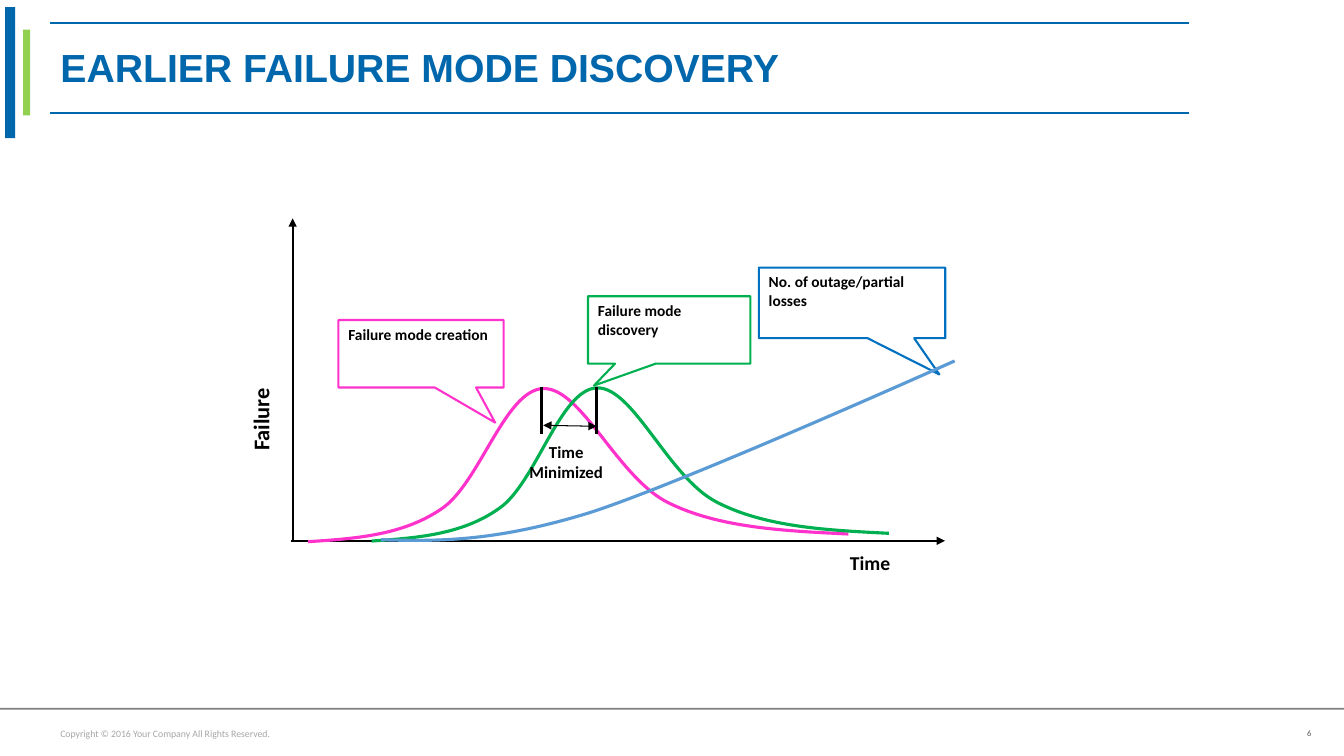
from lxml import etree
from pptx import Presentation
from pptx.dml.color import RGBColor
from pptx.enum import shapes as es, text as et
from pptx.oxml.ns import qn
from pptx.util import Pt

BLUE = RGBColor(0x00, 0x67, 0xAC)
LIME = RGBColor(0x92, 0xD0, 0x50)
GRAY = RGBColor(0x80, 0x80, 0x80)
PALE = RGBColor(0xA6, 0xA6, 0xA6)
DARK = RGBColor(0x59, 0x59, 0x59)
BLACK = RGBColor(0, 0, 0)
WHITE = RGBColor(0xFF, 0xFF, 0xFF)
PINK = RGBColor(0xFF, 0x33, 0xCC)
GREEN = RGBColor(0x00, 0xB0, 0x50)
AZURE = RGBColor(0x00, 0x70, 0xC0)
SKY = RGBColor(0x5B, 0x9B, 0xD5)

LEFT, MID, RIGHT = et.PP_ALIGN.LEFT, et.PP_ALIGN.CENTER, et.PP_ALIGN.RIGHT
RECT = es.MSO_SHAPE.RECTANGLE
CALL = es.MSO_SHAPE.RECTANGULAR_CALLOUT

# Curves as Bezier points, in fractions of their frame
BELL = [(0, 1), (.086, .98), (.174, .96), (.246, .79),
        (.317, .63), (.364, .02), (.435, .01),
        (.506, 0), (.573, .59), (.668, .75),
        (.761, .91), (.881, .93), (1, .95)]
RISE = [(0, .99), (.1, 1), (.2, 1), (.364, .84), (.53, .67), (1, 0), (1, 0)]


def write(shape, lines, size, color=BLACK, bold=True, align=LEFT, after=0,
          font="Calibri", anchor=et.MSO_ANCHOR.TOP):
    frame = shape.text_frame
    frame.word_wrap = True
    frame.vertical_anchor = anchor
    frame.text = "\n".join(lines)
    for para in frame.paragraphs:
        para.alignment = align
        para.space_after = Pt(after)
        para.font.name = font
        para.font.size = Pt(size)
        para.font.bold = bold
        para.font.color.rgb = color
    return frame


def label(part, x, y, w, h, lines, size, **look):
    area = part.shapes.add_textbox(Pt(x), Pt(y), Pt(w), Pt(h))
    write(area, lines, size, **look)
    return area


def block(part, kind, x, y, w, h, fill):
    shape = part.shapes.add_shape(kind, Pt(x), Pt(y), Pt(w), Pt(h))
    shape.shadow.inherit = False
    shape.fill.solid()
    shape.fill.fore_color.rgb = fill
    shape.line.fill.background()
    return shape


def rule(part, x1, y1, x2, y2, color, width, ends=()):
    line = part.shapes.add_connector(
        es.MSO_CONNECTOR.STRAIGHT, Pt(x1), Pt(y1), Pt(x2), Pt(y2))
    line.line.color.rgb = color
    line.line.width = Pt(width)
    for end in ends:
        etree.SubElement(line.line._get_or_add_ln(), qn("a:" + end),
                         type="triangle")
    etree.SubElement(line._element.spPr, qn("a:effectLst"))


def curve(part, x, y, w, h, knots, color):
    dots = [(Pt(x + u * w), Pt(y + v * h)) for u, v in knots]
    pen = part.shapes.build_freeform(*dots[0])
    pen.add_line_segments(dots[1:], close=False)
    shape = pen.convert_to_shape()
    # Join each three segments into one cubic Bezier
    steps = list(shape._element.iter(qn("a:lnTo")))
    for i in range(0, len(steps), 3):
        bend = etree.Element(qn("a:cubicBezTo"))
        steps[i].addprevious(bend)
        for step in steps[i:i + 3]:
            bend.append(step[0])
            step.getparent().remove(step)
    shape.shadow.inherit = False
    shape.fill.background()
    shape.line.color.rgb = color
    shape.line.width = Pt(2.25)


def header(slide, x, y, w, h):
    # Side bars and rules
    block(slide, RECT, x - 19.4, y + 4.6, 5, 61.2, LIME)
    block(slide, RECT, x - 32.4, y - 11.5, 7.2, 93.6, BLUE)
    for edge in (y + h, y):
        rule(slide, x, edge, x + w, edge, BLUE, 1.5)
    # Title
    title = slide.shapes.title
    title.left, title.top = Pt(x), Pt(y + 5.6)
    title.width, title.height = Pt(w + 6), Pt(55.4)
    frame = write(title, ["EARLIER FAILURE MODE DISCOVERY"], 28, BLUE,
                  font="Arial", anchor=et.MSO_ANCHOR.MIDDLE)
    frame.paragraphs[0].line_spacing = .9


def footer(slide, x, y, w):
    block(slide, RECT, x, y, w, 1.4, GRAY)
    label(slide, x + 36, y + 10.4, 901, 16.6,
          ["Copyright © 2016 Your Company All Rights Reserved."], 7,
          color=PALE, bold=False, anchor=et.MSO_ANCHOR.MIDDLE)
    page = label(slide, x + 897, y + 10.4, 39.6, 18, ["6"], 6, color=DARK,
                 bold=False, align=RIGHT).text_frame
    page.margin_left = page.margin_top = Pt(4.3)
    page.margin_right = page.margin_bottom = 0


def graph(slide, x, y, w, h):
    # Axes
    rule(slide, x - 1, y + h, x + w, y + h, BLACK, 1.5, ["tailEnd"])
    rule(slide, x, y + h, x, y, BLACK, 1.5, ["tailEnd"])
    # Bell curves
    curve(slide, x + 11, y + 120.5, 386, 110.5, BELL, PINK)
    curve(slide, x + 56.5, y + 120, 369.5, 110.5, BELL, GREEN)
    # Callouts
    for dx, dy, cw, ch, tip, color, words in (
            (211, 55.6, 116, 48.2, (-.463, .825), GREEN,
             "Failure mode discovery"),
            (32.7, 72.6, 118, 48.2, (.449, 1.021), PINK,
             "Failure mode creation"),
            (333, 35.2, 133.2, 50.4, (.468, 1.013), AZURE,
             "No. of outage/partial losses")):
        call = block(slide, CALL, x + dx, y + dy, cw, ch, WHITE)
        call.adjustments[0], call.adjustments[1] = tip
        call.line.color.rgb = color
        call.line.width = Pt(1.5)
        write(call, [words], 11, after=10)
    # Gap between the peaks
    gap = slide.shapes.add_group_shape()
    for dx in (177.6, 217.2):
        rule(gap, x + dx, y + 120.8, x + dx, y + 154, BLACK, 2.25)
    rule(gap, x + 179, y + 147.8, x + 217.2, y + 148.5, BLACK, .75,
         ["headEnd", "tailEnd"])
    label(gap, x + 143, y + 155.8, 105, 36.7, ["Time", "Minimized"], 12,
          align=MID)
    # Axis names
    time = block(slide, RECT, x + 391, y + 234.2, 74, 24.5, WHITE)
    write(time, ["Time"], 14, after=10)
    name = label(slide, x - 57.4, y + 108.6, 85.7, 43.2, ["Failure"], 16,
                 after=10)
    name.rotation = 270
    # Rising losses
    curve(slide, x + 63.2, y + 101.8, 409.7, 129, RISE, SKY)


def main():
    deck = Presentation()
    deck.slide_width, deck.slide_height = Pt(960), Pt(540)
    slide = deck.slides.add_slide(deck.slide_layouts[5])
    header(slide, 36, 16.6, 813.6, 64)
    footer(slide, 0, 505.6, 960)
    graph(slide, 209, 156, 466, 230.3)
    deck.save("out.pptx")


if __name__ == "__main__":
    main()
